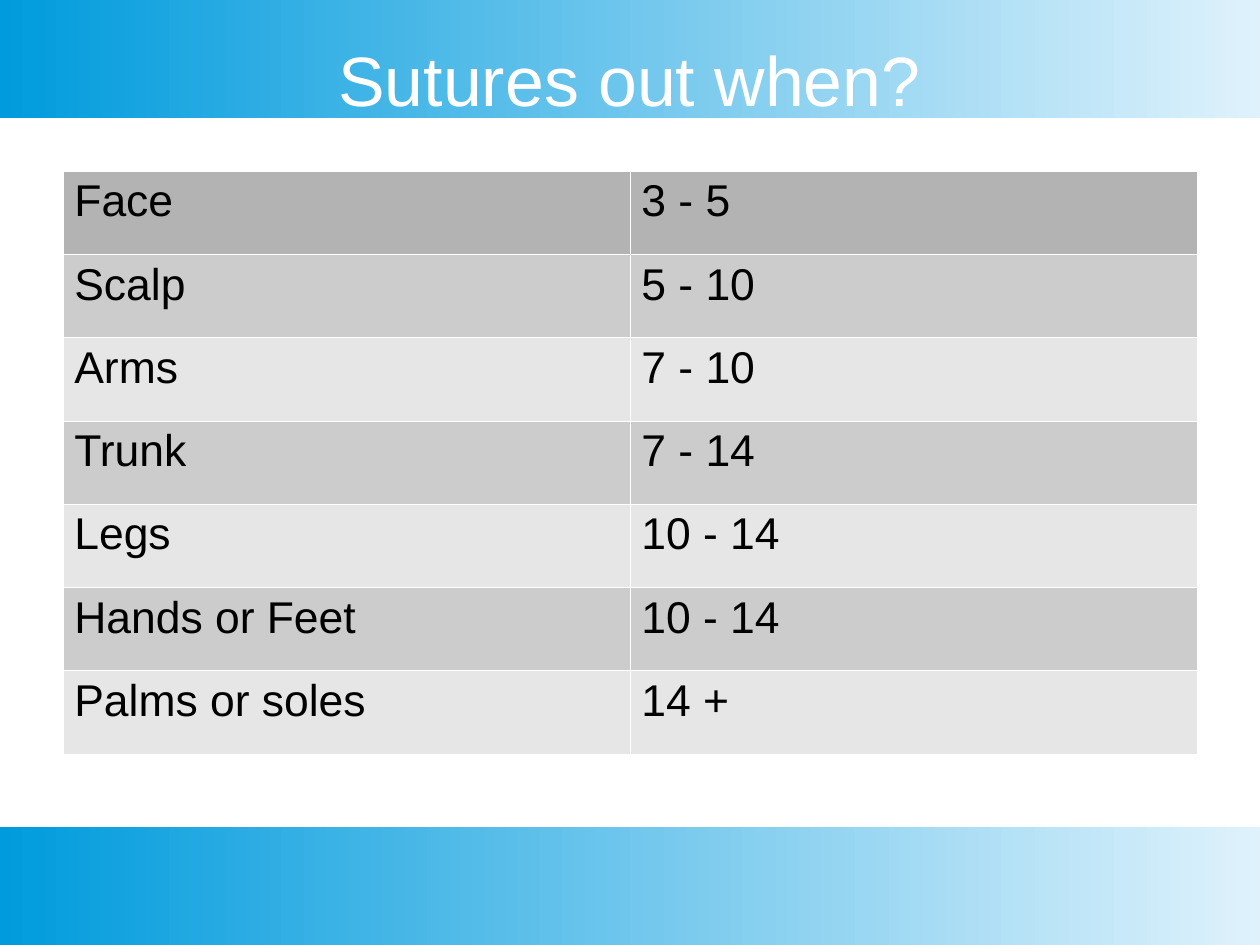
from lxml import etree
from pptx import Presentation
from pptx import util as u
from pptx.dml.color import RGBColor
from pptx.enum import shapes, text
from pptx.oxml import ns

PX = 9000  # EMU per px, 40 px to the centimetre
W, H = 1120, 840
BAND_H = 105

BLUE = RGBColor(0x00, 0x9B, 0xDD)
PALE_BLUE = RGBColor(0xDF, 0xF2, 0xFC)
WHITE = RGBColor(0xFF, 0xFF, 0xFF)
BLACK = RGBColor(0x00, 0x00, 0x00)
HEAD_GREY = RGBColor(0xB3, 0xB3, 0xB3)
BAND_GREYS = [RGBColor(0xE6, 0xE6, 0xE6), RGBColor(0xCC, 0xCC, 0xCC)]

REMOVAL_DAYS = [
    ("Face", "3 - 5"),
    ("Scalp", "5 - 10"),
    ("Arms", "7 - 10"),
    ("Trunk", "7 - 14"),
    ("Legs", "10 - 14"),
    ("Hands or Feet", "10 - 14"),
    ("Palms or soles", "14 +"),
]


def emu(box):
    return [u.Emu(v * PX) for v in box]


def add_run(p, words, size, color):
    r = p.add_run()
    r.text = words
    r.font.name = "Arial"
    r.font.size = u.Pt(size)
    r.font.color.rgb = color


def add_band(s, box):
    sp = s.shapes.add_shape(shapes.MSO_SHAPE.RECTANGLE, *emu(box))
    sp.shadow.inherit = False
    sp.line.fill.background()
    sp.fill.gradient()
    sp.fill.gradient_angle = 180
    for stop, color in zip(sp.fill.gradient_stops, (PALE_BLUE, BLUE)):
        stop.color.rgb = color


def add_title(s, box, words):
    tf = s.shapes.add_textbox(*emu(box)).text_frame
    tf.word_wrap = True
    tf.vertical_anchor = text.MSO_ANCHOR.MIDDLE
    tf.margin_left = tf.margin_right = tf.margin_top = tf.margin_bottom = 0
    p = tf.paragraphs[0]
    p.alignment = text.PP_ALIGN.CENTER
    add_run(p, words, 44, WHITE)


def add_borders(cell, color, width):
    """Line all four sides; call before the fill, which must follow in the XML."""
    tcPr = cell._tc.get_or_add_tcPr()
    for side in ("lnL", "lnR", "lnT", "lnB"):
        ln = etree.SubElement(tcPr, ns.qn(f"a:{side}"), w=str(u.Pt(width)))
        fill = etree.SubElement(ln, ns.qn("a:solidFill"))
        etree.SubElement(fill, ns.qn("a:srgbClr"), val=str(color))


def add_days_table(s, box, rows):
    x, y, w, h = emu(box)
    table = s.shapes.add_table(len(rows), len(rows[0]), x, y, w, h).table
    for i, row in enumerate(rows):
        for j, words in enumerate(row):
            cell = table.cell(i, j)
            add_borders(cell, WHITE, 0.06)
            cell.fill.solid()
            cell.fill.fore_color.rgb = BAND_GREYS[i % 2] if i else HEAD_GREY
            add_run(cell.text_frame.paragraphs[0], words, 28, BLACK)


def add_sutures_slide(prs):
    s = prs.slides.add_slide(prs.slide_layouts[6])
    for top in (0, H - BAND_H):
        add_band(s, (0, top, W, BAND_H))
    add_title(s, (56, 34, 1008, 71), "Sutures out when?")
    add_days_table(s, (56, 152, 1008, 518), REMOVAL_DAYS)


def main():
    prs = Presentation()
    prs.slide_width, prs.slide_height = emu((W, H))
    add_sutures_slide(prs)
    prs.save("out.pptx")


if __name__ == "__main__":
    main()
